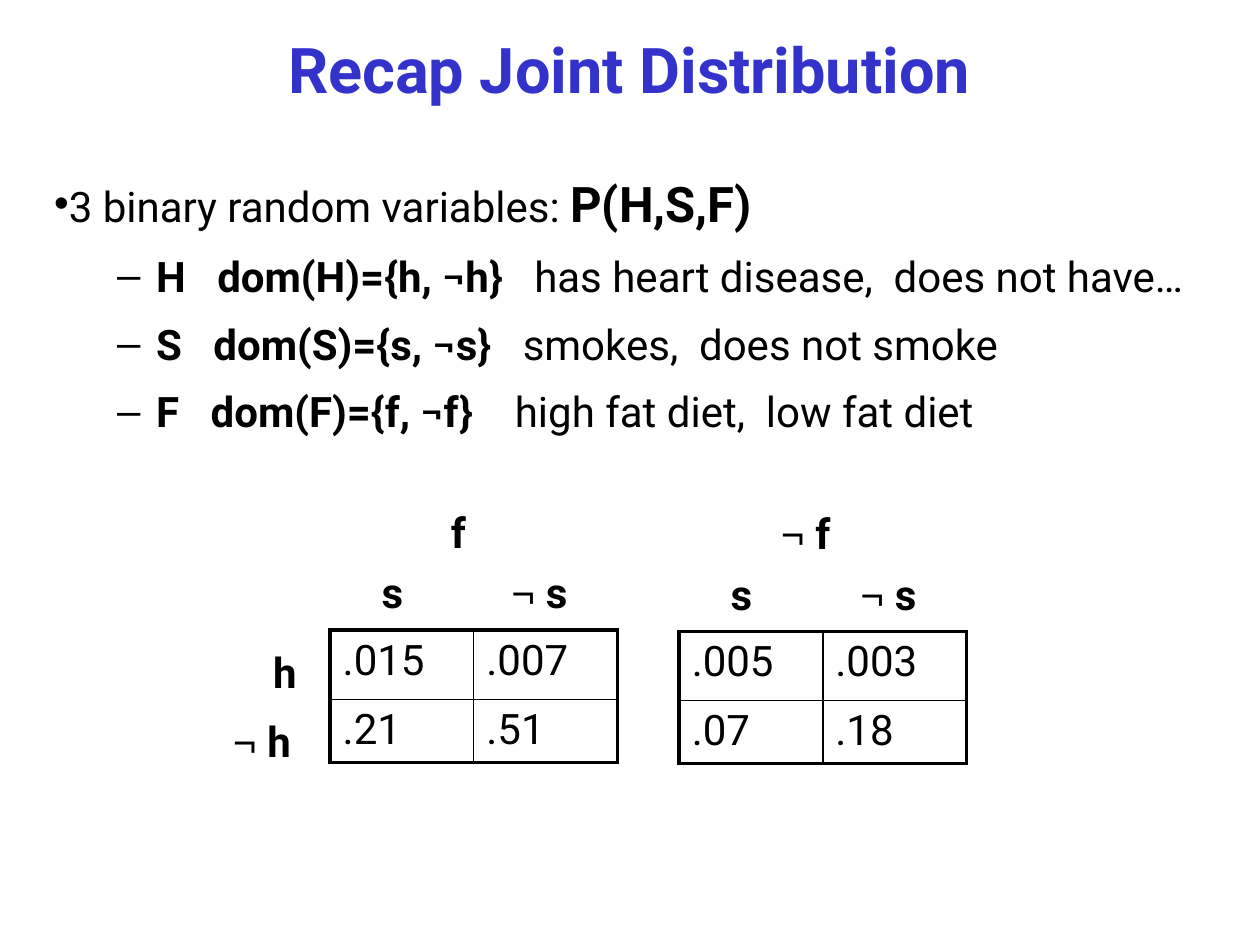
from pptx import Presentation
from pptx import util as u
from pptx.dml.color import RGBColor
from pptx.enum import text
from pptx.oxml import parse_xml
from pptx.oxml.ns import nsdecls

BLUE = RGBColor(0x33, 0x33, 0xCC)
BLACK = RGBColor(0, 0, 0)
THIN, THICK = 1, 2.25


class Deck:
    font = "Roboto"
    symbol_font = "Times New Roman"
    size = 24

    def __init__(self, prs):
        self.slide = prs.slides.add_slide(prs.slide_layouts[1])

    def place(self, shape, left, top, width, height):
        shape.left, shape.top = u.Inches(left), u.Inches(top)
        shape.width, shape.height = u.Inches(width), u.Inches(height)

    def style(self, font, size=size, color=BLACK, bold=None):
        font.name, font.size, font.bold = self.font, u.Pt(size), bold
        font.color.rgb = color

    def title(self, wording, *box):
        heading = self.slide.shapes.title
        self.place(heading, *box)
        frame = heading.text_frame
        frame.text = wording
        frame.auto_size = text.MSO_AUTO_SIZE.NONE
        frame.vertical_anchor = text.MSO_ANCHOR.MIDDLE
        line = frame.paragraphs[0]
        line.alignment = text.PP_ALIGN.CENTER
        self.style(line.font, 36, BLUE, True)

    def bullets(self, items, *box):
        """Each item: level, bullet, left margin, indent, (wording, size, bold) runs."""
        body = self.slide.placeholders[1]
        self.place(body, *box)
        frame = body.text_frame
        frame.auto_size = text.MSO_AUTO_SIZE.NONE
        for i, (level, mark, margin, indent, runs) in enumerate(items):
            line = frame.add_paragraph() if i else frame.paragraphs[0]
            line.level = level
            line.space_before = line.space_after = u.Pt(5)
            self.style(line.font)
            for wording, size, bold in runs:
                run = line.add_run()
                run.text = wording
                self.style(run.font, size, BLACK, bold)
            props = line._p.get_or_add_pPr()
            props.set("marL", str(u.Inches(margin)))
            props.set("indent", str(u.Inches(indent)))
            bullet = parse_xml(f'<a:buChar {nsdecls("a")} char="{mark}"/>')
            props.insert_element_before(bullet, "a:tabLst", "a:defRPr", "a:extLst")

    def label(self, name, left, top, width, negated=False):
        box = self.slide.shapes.add_textbox(
            u.Inches(left), u.Inches(top), u.Inches(width), u.Inches(0.5))
        frame = box.text_frame
        frame.word_wrap = False
        frame.auto_size = text.MSO_AUTO_SIZE.SHAPE_TO_FIT_TEXT
        line = frame.paragraphs[0]
        self.style(line.font, bold=True)
        if negated:
            sign = line.add_run()
            sign.text = "¬ "
            sign.font.name = self.symbol_font
        line.add_run().text = name

    def table(self, rows, left, top, col_width, row_heights):
        last_row, last_col = len(rows) - 1, len(rows[0]) - 1
        grid = self.slide.shapes.add_table(
            len(rows), len(rows[0]), u.Inches(left), u.Inches(top),
            u.Inches(col_width * len(rows[0])), u.Inches(sum(row_heights))).table
        grid.first_row = grid.horz_banding = False
        for column in grid.columns:
            column.width = u.Inches(col_width)
        for r, values in enumerate(rows):
            grid.rows[r].height = u.Inches(row_heights[r])
            for c, value in enumerate(values):
                cell = grid.cell(r, c)
                cell.text = value
                cell.fill.background()
                self.style(cell.text_frame.paragraphs[0].font)
                self.borders(cell, L=c == 0, R=c == last_col,
                             T=r == 0, B=r == last_row)

    def borders(self, cell, **outer_sides):
        props = cell._tc.get_or_add_tcPr()
        for i, (side, outer) in enumerate(outer_sides.items()):
            width = u.Pt(THICK if outer else THIN)
            props.insert(i, parse_xml(
                f'<a:ln{side} {nsdecls("a")} w="{width}"><a:solidFill>'
                f'<a:srgbClr val="{BLACK}"/></a:solidFill></a:ln{side}>'))


def main():
    prs = Presentation()
    prs.slide_width, prs.slide_height = u.Inches(10), u.Inches(7.5)
    deck = Deck(prs)

    # Title
    deck.title("Recap Joint Distribution", 0.33, 0.17, 9.33, 0.75)

    # Variables and their domains
    variables = [
        ("H   dom(H)={h, ¬h}", "   has heart disease,  does not have…"),
        ("S   dom(S)={s, ¬s}", "   smokes,  does not smoke"),
        ("F   dom(F)={f, ¬f}", "    high fat diet,  low fat diet"),
    ]
    items = [(0, "•", 0, 0, [("3 binary random variables: ", 24, False),
                             ("P(H,S,F)", 28, True)])]
    items += [(1, "–", 0.81, -0.31, [(domain, 24, True), (meaning, 24, False)])
              for domain, meaning in variables]
    deck.bullets(items, 0.33, 1.33, 10.02, 2.65)

    # Joint probabilities, one table for each value of F
    halves = [
        (2.62, 5, [(".015", ".007"), (".21", ".51")], (0.86, 0.31, False)),
        (5.39, 5.01, [(".005", ".003"), (".07", ".18")], (0.71, 0.63, True)),
    ]
    for left, top, rows, (f_offset, f_width, f_negated) in halves:
        deck.table(rows, left, top, 1.14, (0.55, 0.5))
        deck.label("s", left + 0.31, top - 0.55, 0.39)
        deck.label("s", left + 1.34, top - 0.55, 0.71, negated=True)
        deck.label("f", left + f_offset, top - 1.03, f_width, f_negated)

    # Row labels
    deck.label("h", 2.07, 5.08, 0.4)
    deck.label("h", 1.75, 5.63, 0.73, negated=True)

    prs.save("out.pptx")


if __name__ == "__main__":
    main()
